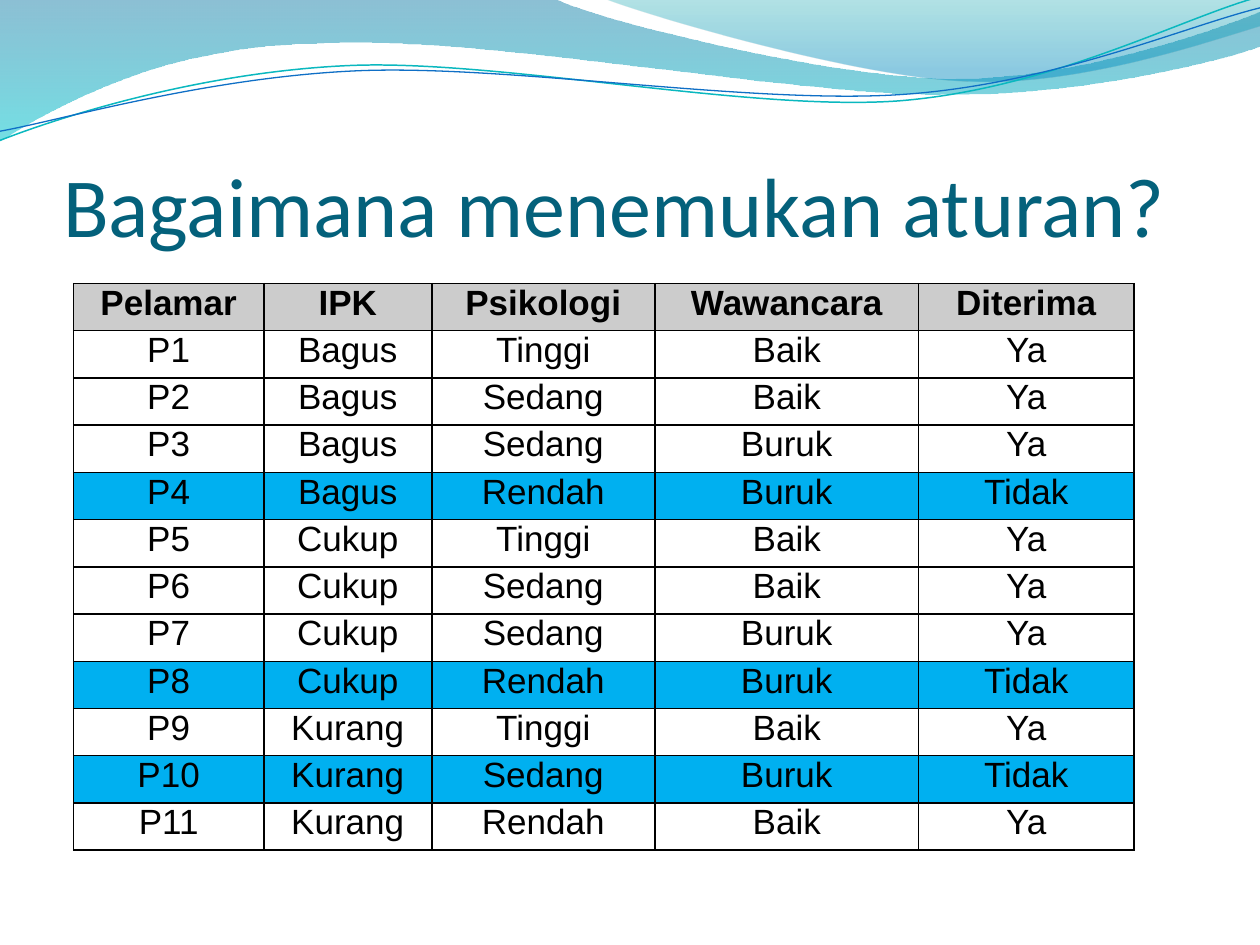
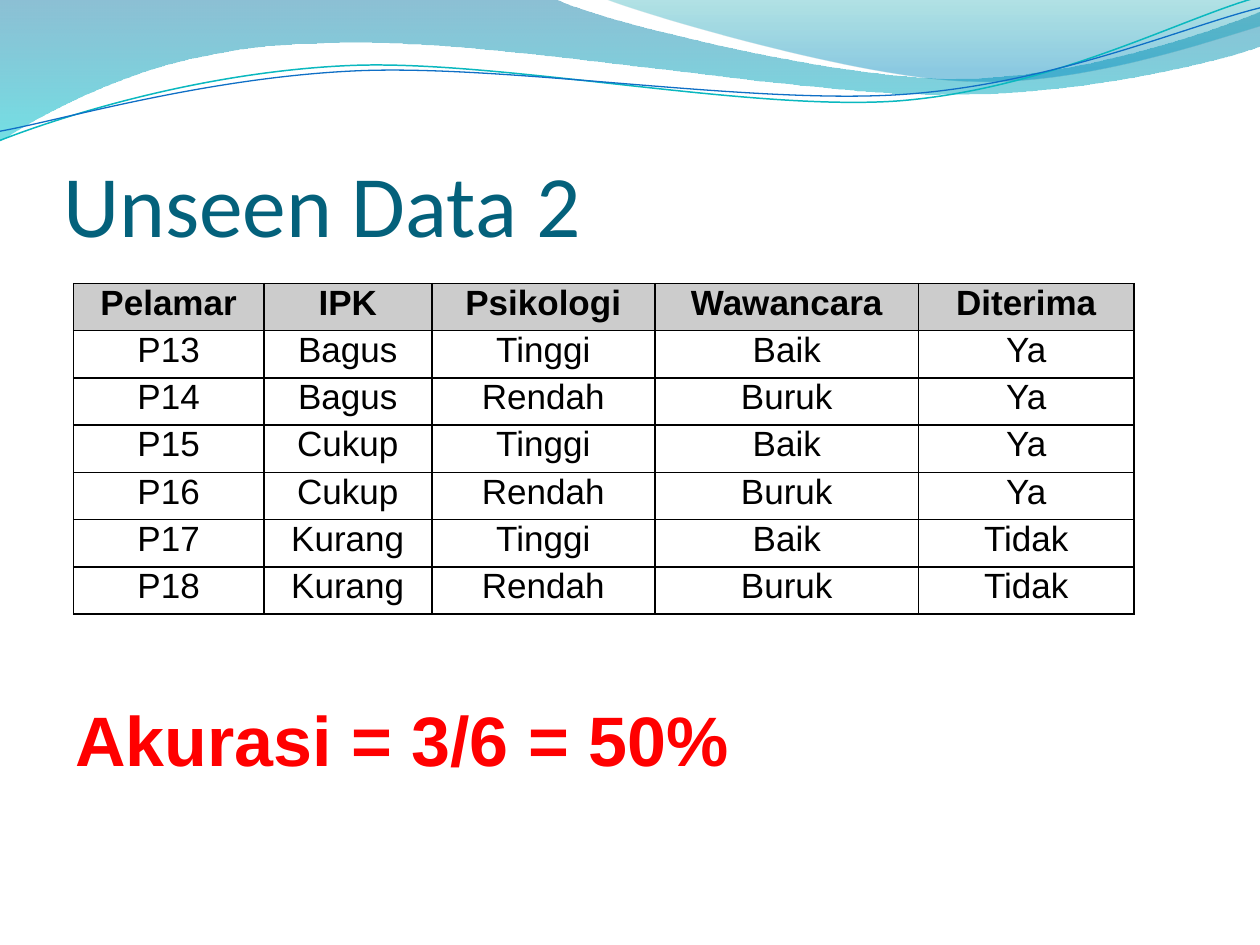
import math

from lxml import etree
from pptx import Presentation
from pptx import util as u
from pptx.dml.color import RGBColor
from pptx.enum import text as t
from pptx.oxml.ns import qn

PX = 9525
INK, TEAL, RED = "000000", "04617B", "FF0000"
HEADER_GREY, REJECTED_BLUE = "CCCCCC", "00B0F0"
COLUMN_WIDTHS = (145, 128, 170, 201, 164)
ROW_HEIGHT = 36
WAVE_TILT = 2.7
HEADINGS = "Pelamar IPK Psikologi Wawancara Diterima"

APPLICANTS = """
P1 Bagus Tinggi Baik Ya
P2 Bagus Sedang Baik Ya
P3 Bagus Sedang Buruk Ya
P4 Bagus Rendah Buruk Tidak
P5 Cukup Tinggi Baik Ya
P6 Cukup Sedang Baik Ya
P7 Cukup Sedang Buruk Ya
P8 Cukup Rendah Buruk Tidak
P9 Kurang Tinggi Baik Ya
P10 Kurang Sedang Buruk Tidak
P11 Kurang Rendah Baik Ya
"""
UNSEEN_APPLICANTS = """
P13 Bagus Tinggi Baik Ya
P14 Bagus Rendah Buruk Ya
P15 Cukup Tinggi Baik Ya
P16 Cukup Rendah Buruk Ya
P17 Kurang Tinggi Baik Tidak
P18 Kurang Rendah Buruk Tidak
"""

WIDE_BAND = [
    [(0, -1)], [(422, -1)],
    [(457, 16), (637, 60), (728, 60)], [(819, 60), (920, 25), (960, 9)],
    [(961, 35)],
    [(944, 42), (835, 73), (716, 72)], [(596, 72), (367, 27), (247, 33)],
    [(124, 34), (44, 80), (-1, 108)], [(0, -1)],
]
RIGHT_BAND = [
    [(460, -1)],
    [(489, 11), (655, 60), (738, 62)], [(822, 66), (923, 31), (960, 20)],
    [(960, 0)], [(460, -1)],
]
TEAL_WAVE = [
    [(0, 107)],
    [(46, 89), (152, 55), (266, 50)], [(379, 45), (569, 85), (684, 77)],
    [(800, 68), (900, 14), (958, -2)],
]
BLUE_WAVE = [
    [(0, 100)],
    [(45, 92), (157, 59), (272, 54)], [(387, 49), (573, 80), (688, 72)],
    [(803, 64), (903, 20), (960, 6)],
]


def px(length):
    """Turn pixels into EMU."""
    return u.Emu(round(length * PX))


def rgb(code):
    """Turn a hex string into a colour."""
    return RGBColor.from_string(code)


def set_all(target, values):
    """Set every attribute in values on target."""
    for key, value in values.items():
        setattr(target, key, value)


def write(frame, words, align, colour, **font):
    """Put one formatted paragraph into a text frame."""
    paragraph = frame.paragraphs[0]
    paragraph.alignment = align
    run = paragraph.add_run()
    run.text = words
    set_all(run.font, font)
    run.font.color.rgb = rgb(colour)


def turn(point, centre, degrees):
    """Turn a point clockwise about a centre."""
    angle = math.radians(degrees)
    dx, dy = point[0] - centre[0], point[1] - centre[1]
    return (centre[0] + dx * math.cos(angle) - dy * math.sin(angle),
            centre[1] + dx * math.sin(angle) + dy * math.cos(angle))


def add_outline(slide, segments, close):
    """Draw a freeform whose three-point segments are Bezier curves."""
    corners = [(px(x), px(y)) for segment in segments for x, y in segment]
    builder = slide.shapes.build_freeform(*corners[0], scale=1.0)
    builder.add_line_segments(corners[1:], close=close)
    outline = builder.convert_to_shape()
    outline.shadow.inherit = False
    steps = iter(list(outline.element.iter(qn("a:lnTo"))))
    for segment in segments[1:]:
        lines = [next(steps) for _ in segment]
        if len(lines) == 3:
            curve = etree.Element(qn("a:cubicBezTo"))
            lines[0].addprevious(curve)
            for line in lines:
                curve.append(line[0])
                line.getparent().remove(line)
    return outline


def add_band(slide, segments, stops):
    """Draw a band with a see-through vertical gradient."""
    band = add_outline(slide, segments, True)
    band.line.fill.background()
    band.fill.gradient()
    band.fill.gradient_angle = 270
    for stop, (position, colour, _) in zip(band.fill.gradient_stops, stops):
        stop.color.rgb = rgb(colour)
        stop.position = position
    tints = band.element.spPr.iter(qn("a:srgbClr"))
    for tint, (_, _, opacity) in zip(tints, stops):
        etree.SubElement(tint, qn("a:alpha"), val=str(opacity * 1000))
    return band


def add_wave(slide, segments, centre, colour, width):
    """Draw a thin curved line, tilted about its centre."""
    level = [[turn(point, centre, WAVE_TILT) for point in segment]
             for segment in segments]
    wave = add_outline(slide, level, False)
    wave.rotation = 360 - WAVE_TILT
    wave.fill.background()
    wave.line.color.rgb = rgb(colour)
    wave.line.width = u.Pt(width)
    return wave


def decorate(master, slide):
    """Draw the header waves and hand them to the slide master."""
    waves = [
        add_band(slide, WIDE_BAND, [(0, "0074A1", 45), (1, "00C6CF", 55)]),
        add_band(slide, RIGHT_BAND, [(0, "00A1A9", 30), (0.8, "008BBF", 45)]),
        add_wave(slide, TEAL_WAVE, (479, 55), "0AB8BF", 0.85),
        add_wave(slide, BLUE_WAVE, (480, 57), "0F6FC6", 0.75),
    ]
    for number, wave in enumerate(waves):
        wave.element.nvSpPr.cNvPr.id = 100 + number
        master.element.cSld.spTree.insert(2 + number, wave.element)


def add_title(slide, words, size):
    """Fill and place the title placeholder."""
    title = slide.shapes.title
    set_all(title, dict(left=px(48), top=px(74), width=px(864), height=px(120)))
    set_all(title.text_frame, dict(
        margin_left=0, margin_top=px(5), margin_right=0, margin_bottom=0,
        word_wrap=True, auto_size=t.MSO_AUTO_SIZE.NONE,
        vertical_anchor=t.MSO_ANCHOR.BOTTOM))
    write(title.text_frame, words, t.PP_ALIGN.LEFT, TEAL,
          name="Calibri", size=u.Pt(size))


def add_borders(cell):
    """Give a cell thin black edges."""
    properties = cell._tc.get_or_add_tcPr()
    for side in "LRTB":
        edge = etree.SubElement(properties, qn(f"a:ln{side}"), w=str(u.Pt(1)))
        fill = etree.SubElement(edge, qn("a:solidFill"))
        etree.SubElement(fill, qn("a:srgbClr"), val=INK)


def add_cell(cell, words, fill, bold):
    """Write and format one table cell."""
    set_all(cell, dict(margin_left=px(7), margin_right=px(7),
                       margin_top=0, margin_bottom=0))
    add_borders(cell)
    if fill:
        cell.fill.solid()
        cell.fill.fore_color.rgb = rgb(fill)
    else:
        cell.fill.background()
    write(cell.text_frame, words, t.PP_ALIGN.CENTER, INK,
          name="Arial", size=u.Pt(20), bold=bold)


def add_applicants(slide, applicants, marked=None):
    """Add the applicant table, colouring rows whose decision is marked."""
    lines = [line.split() for line in [HEADINGS, *applicants.strip().splitlines()]]
    table = slide.shapes.add_table(
        len(lines), len(COLUMN_WIDTHS), px(56), px(216),
        px(sum(COLUMN_WIDTHS)), px(ROW_HEIGHT * len(lines))).table
    for column, width in zip(table.columns, COLUMN_WIDTHS):
        column.width = px(width)
    for r, line in enumerate(lines):
        table.rows[r].height = px(ROW_HEIGHT)
        fill = HEADER_GREY if r == 0 else REJECTED_BLUE if line[-1] == marked else None
        for c, words in enumerate(line):
            add_cell(table.cell(r, c), words, fill, r == 0)


def add_accuracy(slide, words):
    """Add the large red result line."""
    accuracy = slide.shapes.add_textbox(px(48), px(526), px(872), px(74))
    set_all(accuracy.text_frame, dict(
        word_wrap=True, auto_size=t.MSO_AUTO_SIZE.SHAPE_TO_FIT_TEXT))
    write(accuracy.text_frame, words, t.PP_ALIGN.JUSTIFY, RED,
          name="Arial", size=u.Pt(40), bold=True)


def main():
    """Build the two slides."""
    deck = Presentation()
    set_all(deck, dict(slide_width=px(960), slide_height=px(720)))
    layout = deck.slide_layouts[5]

    rules = deck.slides.add_slide(layout)
    decorate(deck.slide_master, rules)
    add_title(rules, "Bagaimana menemukan aturan?", 48)
    add_applicants(rules, APPLICANTS, marked="Tidak")

    unseen = deck.slides.add_slide(layout)
    add_title(unseen, "Unseen Data 2", 50)
    add_applicants(unseen, UNSEEN_APPLICANTS)
    add_accuracy(unseen, "Akurasi = 3/6 = 50%")

    deck.save("out.pptx")


if __name__ == "__main__":
    main()
